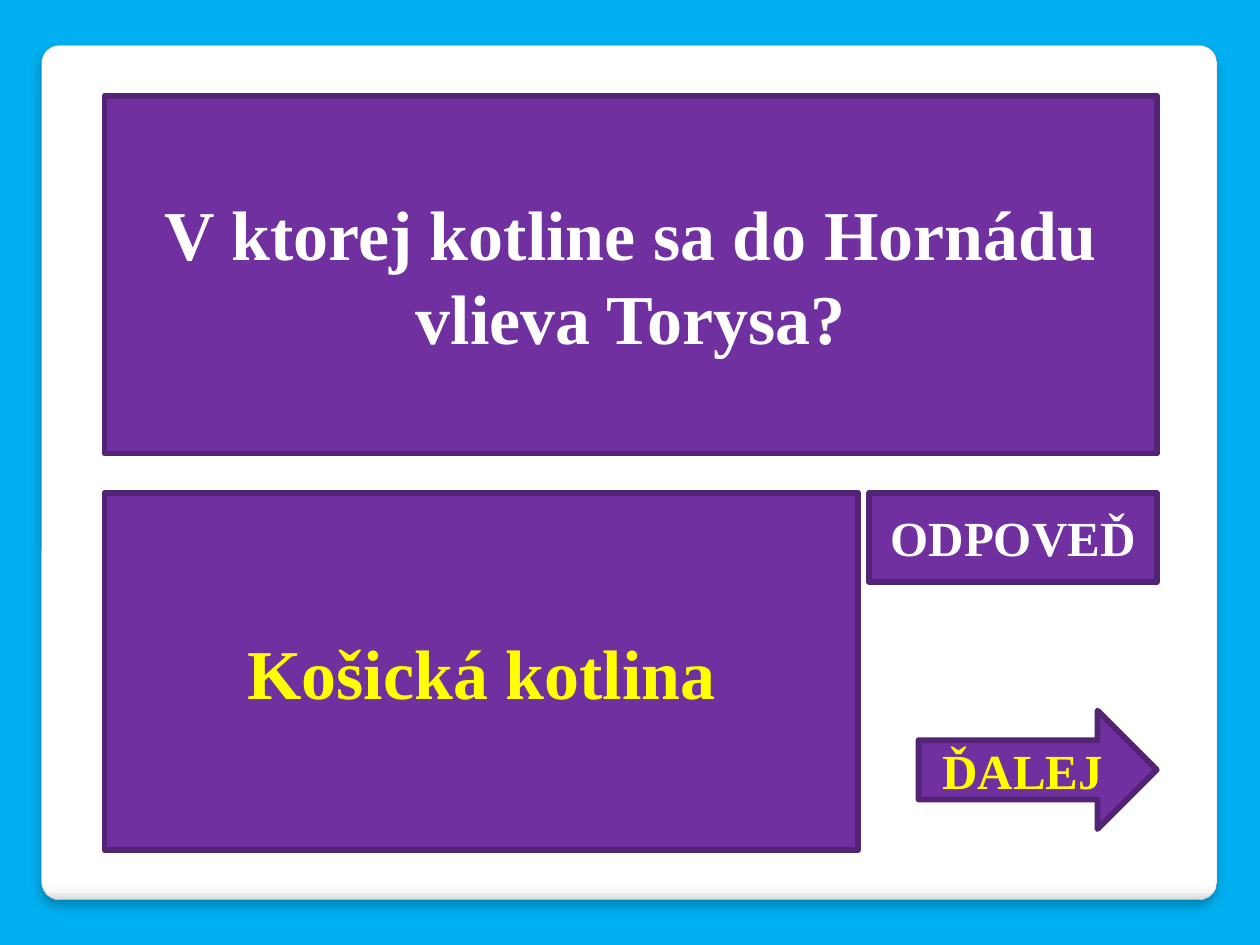
from lxml import etree
from pptx import Presentation
from pptx import util as u
from pptx.dml.color import RGBColor
from pptx.enum import shapes, text
from pptx.oxml import parse_xml
from pptx.oxml.ns import nsdecls, qn

SKY = RGBColor(0x00, 0xB0, 0xF0)
PURPLE = RGBColor(0x70, 0x30, 0xA0)
DARK_PURPLE = RGBColor(0x53, 0x24, 0x76)
GREY = RGBColor(0xA4, 0xA4, 0xA4)
WHITE = RGBColor(0xFF, 0xFF, 0xFF)
YELLOW = RGBColor(0xFF, 0xFF, 0x00)
PANEL_STOPS = [(0, "FFFFFF"), (98, "FFFFFF"), (99, "F7F7F7"), (100, "DADADA")]
FONT = "Times New Roman"


def place(shape, left, top, width, height):
    shape.left, shape.top = u.Inches(left), u.Inches(top)
    shape.width, shape.height = u.Inches(width), u.Inches(height)


def write_text(shape, words, size, color):
    frame = shape.text_frame
    frame.text = words
    frame.word_wrap = True
    frame.auto_size = text.MSO_AUTO_SIZE.NONE
    frame.vertical_anchor = text.MSO_ANCHOR.MIDDLE
    paragraph = frame.paragraphs[0]
    paragraph.alignment = text.PP_ALIGN.CENTER
    font = paragraph.runs[0].font
    font.name, font.size, font.bold = FONT, u.Pt(size), True
    font.color.rgb = color


def style_box(shape):
    shape.fill.solid()
    shape.fill.fore_color.rgb = PURPLE
    shape.line.color.rgb = DARK_PURPLE
    shape.line.width = u.Pt(3.35)
    outline = shape.line._get_or_add_ln()
    etree.SubElement(outline, qn("a:round"))
    shape.shadow.inherit = False


def add_box(slide, kind, box, words, size, color):
    shape = slide.shapes.add_shape(kind, *map(u.Inches, box))
    style_box(shape)
    write_text(shape, words, size=size, color=color)


def add_panel(slide, box):
    panel = slide.shapes.add_shape(
        shapes.MSO_SHAPE.ROUNDED_RECTANGLE, *map(u.Inches, box))
    panel.adjustments[0] = 0.021
    panel.line.color.rgb = GREY
    panel.line.width = u.Pt(0.16)
    stops = "".join(
        f'<a:gs pos="{position * 1000}"><a:srgbClr val="{color}"/></a:gs>'
        for position, color in PANEL_STOPS)
    panel.fill.gradient()
    gradient = panel._element.spPr.find(qn("a:gradFill"))
    gradient.getparent().replace(gradient, parse_xml(
        f'<a:gradFill {nsdecls("a")} rotWithShape="1"><a:gsLst>{stops}</a:gsLst>'
        '<a:lin ang="5400000" scaled="0"/></a:gradFill>'))
    panel._element.spPr.append(parse_xml(
        f'<a:effectLst {nsdecls("a")}><a:outerShdw blurRad="{u.Pt(6)}" '
        f'dist="{u.Pt(4)}" dir="5400000" algn="tl" rotWithShape="0">'
        '<a:srgbClr val="000000"><a:alpha val="25000"/></a:srgbClr>'
        '</a:outerShdw></a:effectLst>'))
    slide.shapes._spTree.insert(2, panel._element)


def add_question(slide, box):
    title = slide.shapes.title
    place(title, *box)
    style_box(title)
    write_text(title, "V ktorej kotline sa do Hornádu vlieva Torysa?",
               size=40, color=WHITE)


def add_answer_area(slide, left, top, width, height):
    right = left + width
    button_width, arrow_width = 2.28, 1.89
    rectangle = shapes.MSO_SHAPE.RECTANGLE
    add_box(slide, rectangle, (left, top, 5.98, height),
            "Košická kotlina", size=40, color=YELLOW)
    add_box(slide, rectangle, (right - button_width, top, button_width, 0.71),
            "ODPOVEĎ", size=28, color=WHITE)
    add_box(slide, shapes.MSO_SHAPE.RIGHT_ARROW,
            (right - arrow_width, top + 1.73, arrow_width, 0.94),
            "ĎALEJ", size=28, color=YELLOW)


def main():
    presentation = Presentation()
    presentation.slide_width = u.Inches(10)
    presentation.slide_height = u.Inches(7.5)
    slide = presentation.slides.add_slide(presentation.slide_layouts[5])
    slide.background.fill.solid()
    slide.background.fill.fore_color.rgb = SKY
    add_panel(slide, (0.33, 0.36, 9.33, 6.78))
    add_question(slide, (0.83, 0.76, 8.35, 2.84))
    add_answer_area(slide, 0.83, 3.91, 8.35, 2.84)
    presentation.save("out.pptx")


if __name__ == "__main__":
    main()
